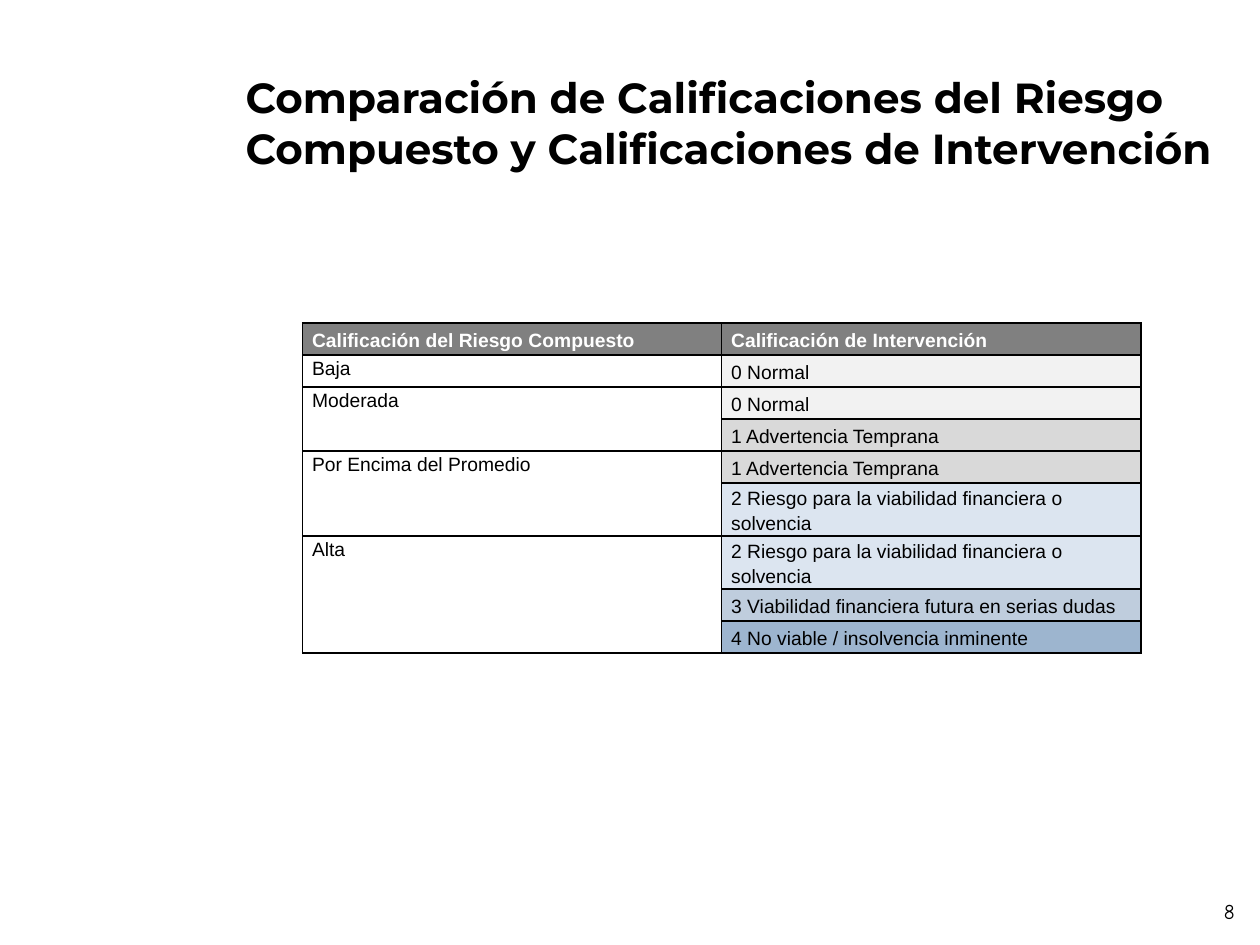
from dataclasses import dataclass

from lxml.etree import SubElement
from pptx import Presentation
from pptx.dml.color import RGBColor
from pptx.enum.text import MSO_ANCHOR, PP_ALIGN
from pptx.oxml.ns import qn
from pptx.util import Cm, Pt

COLORS = {
    "black": "000000",
    "white": "FFFFFF",
    "header": "808080",
    "normal": "F2F2F2",
    "warning": "D9D9D9",
    "viability": "DCE5F0",
    "doubt": "BFCDDD",
    "insolvency": "9DB5CF",
}


@dataclass(frozen=True)
class Intervention:
    label: str
    color: str


@dataclass(frozen=True)
class RiskRating:
    label: str
    interventions: tuple[Intervention, ...]


NORMAL = Intervention("0 Normal", "normal")
WARNING = Intervention("1 Advertencia Temprana", "warning")
VIABILITY = Intervention("2 Riesgo para la viabilidad financiera o solvencia", "viability")
DOUBT = Intervention("3 Viabilidad financiera futura en serias dudas", "doubt")
INSOLVENCY = Intervention("4 No viable / insolvencia inminente", "insolvency")

RATINGS = (
    RiskRating("Baja", (NORMAL,)),
    RiskRating("Moderada", (NORMAL, WARNING)),
    RiskRating("Por Encima del Promedio", (WARNING, VIABILITY)),
    RiskRating("Alta", (VIABILITY, DOUBT, INSOLVENCY)),
)
HEADINGS = ("Calificación del Riesgo Compuesto", "Calificación de Intervención")


def set_font(paragraph, name: str, size: float, color: str = "black", bold: bool = False) -> None:
    font = paragraph.font
    font.name, font.size, font.bold = name, Pt(size), bold
    font.color.rgb = RGBColor.from_string(COLORS[color])


def add_text(slide, text: str, left: float, top: float, width: float, height: float):
    frame = slide.shapes.add_textbox(Cm(left), Cm(top), Cm(width), Cm(height)).text_frame
    frame.word_wrap = True
    frame.text = text
    return frame


def add_borders(cell) -> None:
    properties = cell._tc.get_or_add_tcPr()
    for side in ("lnL", "lnR", "lnT", "lnB"):
        line = SubElement(properties, qn(f"a:{side}"), w=str(Pt(1)))
        fill = SubElement(line, qn("a:solidFill"))
        SubElement(fill, qn("a:srgbClr"), val=COLORS["black"])


def fill_cell(cell, text: str, fill: str | None = None, color: str = "black", bold: bool = False) -> None:
    cell.text = text
    cell.margin_left = cell.margin_right = Cm(0.19)
    cell.margin_top = cell.margin_bottom = 0
    cell.vertical_anchor = MSO_ANCHOR.MIDDLE if fill else MSO_ANCHOR.TOP
    if fill:
        cell.fill.solid()
        cell.fill.fore_color.rgb = RGBColor.from_string(COLORS[fill])
    paragraph = cell.text_frame.paragraphs[0]
    paragraph.alignment = PP_ALIGN.LEFT
    paragraph.line_spacing = 1.15
    set_font(paragraph, "Arial", 11, color, bold)


def add_ratings(slide) -> None:
    row_count = 1 + sum(len(rating.interventions) for rating in RATINGS)
    row_height = Cm(0.645)
    table = slide.shapes.add_table(
        row_count, 2, Cm(6.1), Cm(6.51), Cm(16.9), row_height * row_count
    ).table
    table.first_row = table.horz_banding = False
    for row in table.rows:
        row.height = row_height
    for cell in table.iter_cells():
        add_borders(cell)
        cell.fill.background()

    for column, heading in enumerate(HEADINGS):
        fill_cell(table.cell(0, column), heading, "header", "white", True)
    first = 1
    for rating in RATINGS:
        last = first + len(rating.interventions) - 1
        if last > first:
            table.cell(first, 0).merge(table.cell(last, 0))
        fill_cell(table.cell(first, 0), rating.label)
        for row, intervention in enumerate(rating.interventions, first):
            fill_cell(table.cell(row, 1), intervention.label, intervention.color)
        first = last + 1


def main() -> None:
    presentation = Presentation()
    presentation.slide_width, presentation.slide_height = Cm(25.4), Cm(19.05)
    slide = presentation.slides.add_slide(presentation.slide_layouts[6])

    page_number = add_text(slide, "8", 24.13, 17.86, 0.76, 0.76)
    page_number.margin_left = page_number.margin_right = 0
    page_number.margin_top = page_number.margin_bottom = 0
    page_number.vertical_anchor = MSO_ANCHOR.BOTTOM
    page_number.paragraphs[0].alignment = PP_ALIGN.RIGHT
    set_font(page_number.paragraphs[0], "Comic Neue", 12)

    title = add_text(
        slide,
        "Comparación de Calificaciones del Riesgo Compuesto y Calificaciones de Intervención",
        4.7, 1.32, 20.27, 2.21,
    )
    set_font(title.paragraphs[0], "Montserrat", 24, bold=True)

    add_ratings(slide)
    presentation.save("out.pptx")


if __name__ == "__main__":
    main()
